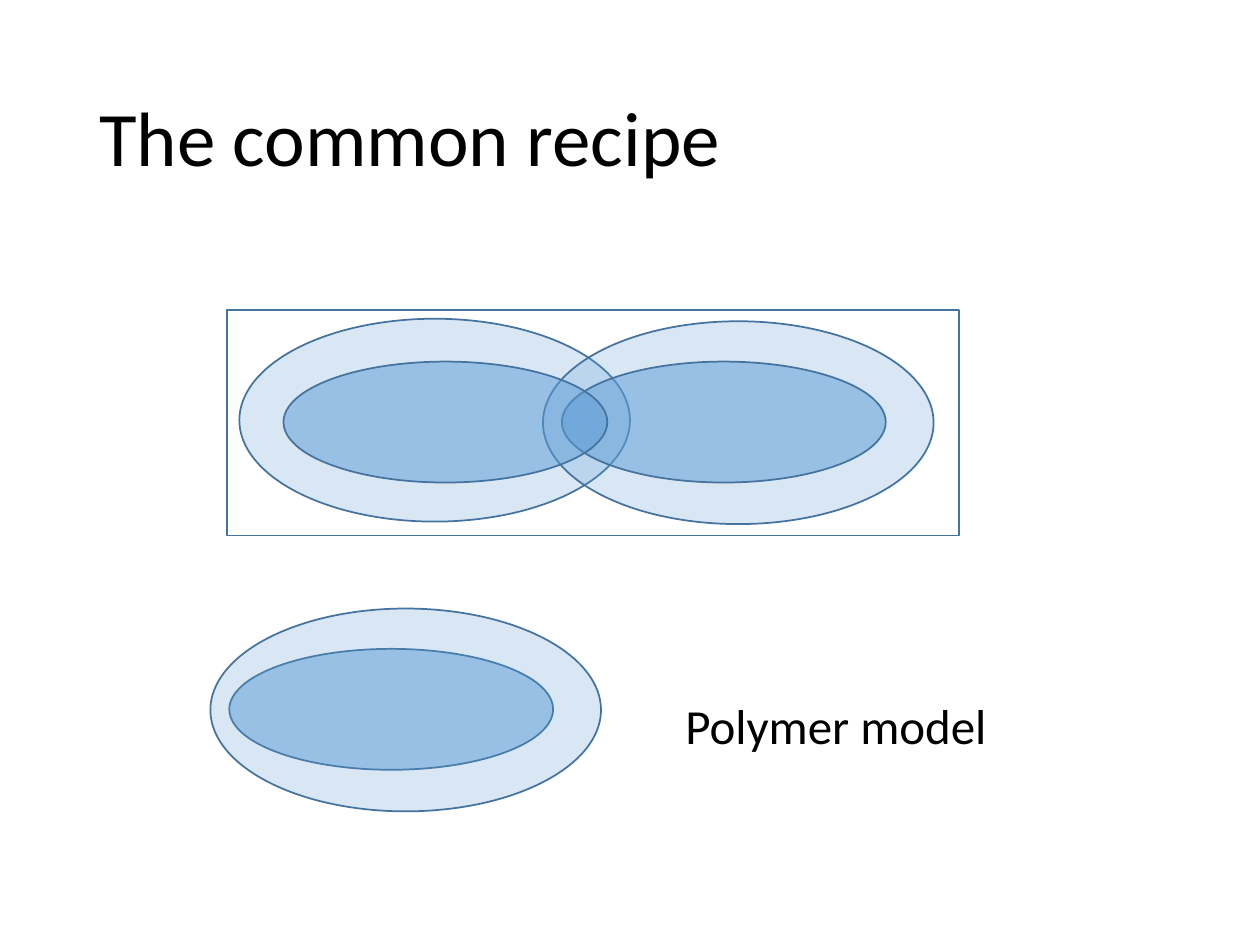
from typing import NamedTuple

from lxml.etree import SubElement
from pptx import Presentation
from pptx.dml.color import RGBColor
from pptx.enum.shapes import MSO_SHAPE
from pptx.enum.text import MSO_ANCHOR
from pptx.oxml.ns import qn
from pptx.util import Inches, Pt

# Grid of 100 columns by 75 rows
COLS, ROWS = 100, 75
BLUE, EDGE, BLACK = "5B9BD5", "43739E", "000000"


class Kind(NamedTuple):
    width: float
    height: float
    alpha: int


class Oval(NamedTuple):
    kind: Kind
    col: float
    row: float


class Label(NamedTuple):
    text: str
    box: tuple[float, float, float, float]
    size: int
    anchor: MSO_ANCHOR
    spacing: float


SHELL = Kind(31, 16.1, 23)
CORE = Kind(25.7, 9.6, 51)

# Back to front: shells of the pair, frame, cores, single model
PAIR = [Oval(SHELL, 19, 25.3), Oval(SHELL, 43.1, 25.5)]
FRAME = (18, 24.6, 58.1, 17.9)
FRONT = [
    Oval(CORE, 44.6, 28.7),
    Oval(CORE, 22.5, 28.7),
    Oval(CORE, 18.2, 51.5),
    Oval(SHELL, 16.7, 48.3),
]
LABELS = [
    Label("The common recipe", (6.9, 4, 86.2, 14.5), 44, MSO_ANCHOR.MIDDLE, 0.9),
    Label("Polymer model", (53.4, 54.7, 27.8, 5.7), 28, MSO_ANCHOR.TOP, 1.0),
]

deck = Presentation()
deck.slide_width, deck.slide_height = Inches(10), Inches(7.5)
slide = deck.slides.add_slide(deck.slide_layouts[6])


def color(code: str) -> RGBColor:
    return RGBColor.from_string(code)


def place(col: float, row: float, width: float, height: float) -> list[int]:
    across, down = deck.slide_width / COLS, deck.slide_height / ROWS
    return [round(n) for n in (col * across, row * down, width * across, height * down)]


def outline(kind: MSO_SHAPE, box: tuple[float, float, float, float]):
    shape = slide.shapes.add_shape(kind, *place(*box))
    shape.shadow.inherit = False
    shape.fill.background()
    shape.line.color.rgb = color(EDGE)
    shape.line.width = Pt(1)
    return shape


def draw_oval(oval: Oval) -> None:
    kind = oval.kind
    shape = outline(MSO_SHAPE.OVAL, (oval.col, oval.row, kind.width, kind.height))
    shape.fill.solid()
    shape.fill.fore_color.rgb = color(BLUE)
    # Transparency of the fill
    tint = shape._element.spPr.find(qn("a:solidFill")).find(qn("a:srgbClr"))
    SubElement(tint, qn("a:alpha"), val=str(kind.alpha * 1000))


def draw_label(label: Label) -> None:
    frame = slide.shapes.add_textbox(*place(*label.box)).text_frame
    frame.word_wrap = True
    frame.vertical_anchor = label.anchor
    para = frame.paragraphs[0]
    para.line_spacing = label.spacing
    run = para.add_run()
    run.text = label.text
    run.font.name = "Calibri"
    run.font.size = Pt(label.size)
    run.font.color.rgb = color(BLACK)


# Diagram
for oval in PAIR:
    draw_oval(oval)
outline(MSO_SHAPE.RECTANGLE, FRAME)
for oval in FRONT:
    draw_oval(oval)

# Title and caption
for label in LABELS:
    draw_label(label)

deck.save("out.pptx")
